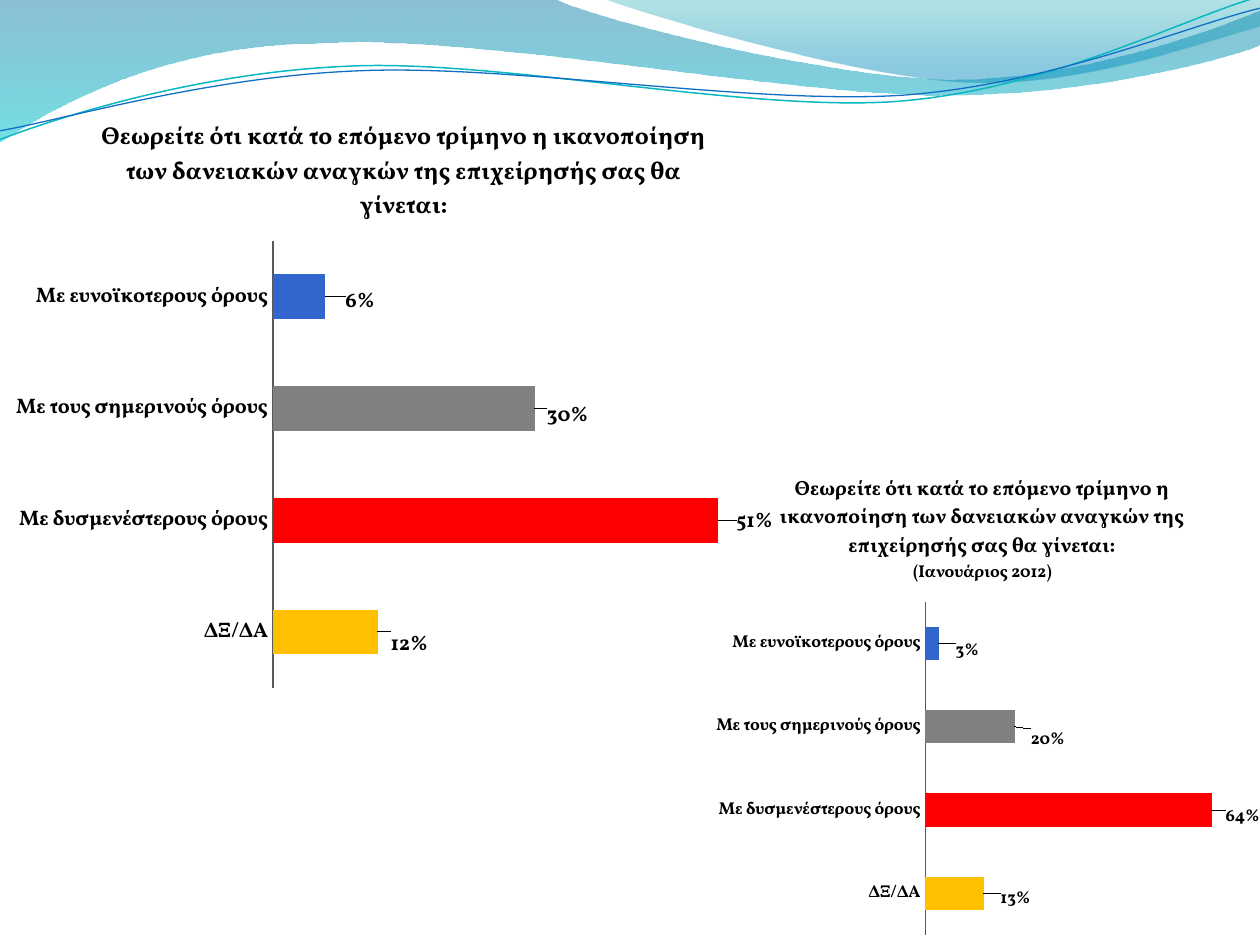
import pptx
import pptx.chart.data
import pptx.dml.color
import pptx.enum.chart
import pptx.oxml
import pptx.oxml.ns
import pptx.util

RGB = pptx.dml.color.RGBColor
BLACK = RGB(0, 0, 0)
AXIS = RGB(0x59, 0x59, 0x59)
BLUE = RGB(0x33, 0x66, 0xCC)
GREY = RGB(0x80, 0x80, 0x80)
RED = RGB(0xFF, 0, 0)
AMBER = RGB(0xFF, 0xC0, 0)
DEEP = RGB(0, 0x74, 0xA1)
AQUA = RGB(0, 0xC6, 0xCF)
TEAL = RGB(0, 0xA1, 0xA9)
SKY = RGB(0, 0x8B, 0xBF)
LINE_TEAL = RGB(0x0A, 0xB8, 0xBF)
LINE_BLUE = RGB(0x0F, 0x6F, 0xC6)

FONT = "Vollkorn"
QUESTION = ("Θεωρείτε ότι κατά το επόμενο τρίμηνο η ικανοποίηση των δανειακών "
            "αναγκών της επιχείρησής σας θα γίνεται:")
ANSWERS = ["Με ευνοϊκοτερους όρους", "Με τους σημερινούς όρους",
           "Με δυσμενέστερους όρους", "ΔΞ/ΔΑ"]
ANSWER_COLORS = [BLUE, GREY, RED, AMBER]
A_NS = pptx.oxml.ns.nsdecls("a")
C_NS = pptx.oxml.ns.nsdecls("c")
qn = pptx.oxml.ns.qn


def px(n):
    """Turn px at 126 to the inch into EMU."""
    return round(n * 914400 / 126)


def format_font(font, size, bold=True, color=BLACK):
    """Set the face, size, weight and colour of a font."""
    font.name = FONT
    font.size = pptx.util.Pt(size)
    font.bold = bold
    font.color.rgb = color


def add_text(p, text, **fmt):
    """Add a formatted run to a paragraph."""
    r = p.add_run()
    r.text = text
    format_font(r.font, **fmt)


def add_outline(s, start, steps, close):
    """Draw a freeform of line steps (x, y) and cubic steps (six numbers)."""
    ends = [(px(step[-2]), px(step[-1])) for step in steps]
    fb = s.shapes.build_freeform(px(start[0]), px(start[1]))
    fb.add_line_segments(ends, close=close)
    sp = fb.convert_to_shape()
    sp.shadow.inherit = False
    lines = sp._element.findall(".//" + qn("a:lnTo"))
    for line, step in zip(lines, steps):
        if len(step) == 6:
            pts = "".join(f'<a:pt x="{px(x) - sp.left}" y="{px(y) - sp.top}"/>'
                          for x, y in zip(step[::2], step[1::2]))
            line.getparent().replace(line, pptx.oxml.parse_xml(
                f"<a:cubicBezTo {A_NS}>{pts}</a:cubicBezTo>"))
    return sp


def add_band(s, start, steps, stops):
    """Draw a wave filled from top to bottom with translucent stops."""
    sp = add_outline(s, start, steps, True)
    sp.line.fill.background()
    sp.fill.gradient()
    sp.fill.gradient_angle = 270
    for stop, (position, color, _) in zip(sp.fill.gradient_stops, stops):
        stop.position = position
        stop.color.rgb = color
    colors = sp._element.spPr.findall(".//" + qn("a:srgbClr"))
    for clr, (_, _, alpha) in zip(colors, stops):
        clr.append(pptx.oxml.parse_xml(
            f'<a:alpha {A_NS} val="{alpha * 1000}"/>'))


def add_wave_line(s, start, steps, color, width):
    """Draw an open, slightly tilted wave line."""
    sp = add_outline(s, start, steps, False)
    sp.rotation = 357.3
    sp.fill.background()
    sp.line.color.rgb = color
    sp.line.width = pptx.util.Pt(width)


def add_waves(s):
    """Draw the decoration along the top edge."""
    add_band(s, (0, -1), [
        (554, -1), (600, 21, 837, 79, 955, 79), (1075, 79, 1207, 33, 1260, 11),
        (1261, 45), (1239, 55, 1096, 96, 940, 95), (784, 95, 481, 35, 324, 43),
        (163, 44, 58, 105, -1, 142)], [(0, DEEP, 45), (1, AQUA, 55)])
    add_band(s, (604, -1), [
        (641, 14, 859, 78, 969, 82), (1079, 87, 1211, 40, 1260, 26),
        (1260, 0)], [(0, TEAL, 30), (0.8, SKY, 45)])
    add_wave_line(s, (-3, 110), [
        (58, 90, 199, 52, 350, 53), (499, 53, 745, 118, 896, 114),
        (1049, 109, 1184, 45, 1260, 27)], LINE_TEAL, 0.85)
    add_wave_line(s, (-2, 101), [
        (57, 94, 207, 57, 357, 58), (509, 58, 750, 111, 902, 108),
        (1052, 104, 1188, 52, 1262, 38)], LINE_BLUE, 0.75)


def set_layout(parent, index, inner=False, edge=True, **fractions):
    """Place a chart part by fractions of the chart, at a child index."""
    for old in parent.findall(qn("c:layout")):
        parent.remove(old)
    parts = '<c:layoutTarget val="inner"/>' if inner else ""
    if edge:
        parts += '<c:xMode val="edge"/><c:yMode val="edge"/>'
    parts += "".join(f'<c:{k} val="{v:.4f}"/>' for k, v in fractions.items())
    parent.insert(index, pptx.oxml.parse_xml(
        f'<c:layout {C_NS}><c:manualLayout>{parts}</c:manualLayout></c:layout>'))


def hide_leader_lines(labels):
    """Turn off the lines between bars and moved labels."""
    labels._element.append(pptx.oxml.parse_xml(
        f'<c:extLst {C_NS}><c:ext uri="{{CE6537A1-D6FC-4f65-9D91-7224C49458BB}}" '
        'xmlns:c15="http://schemas.microsoft.com/office/drawing/2012/chart">'
        '<c15:showLeaderLines val="0"/></c:ext></c:extLst>'))


def add_answers_chart(s, box, plot, title_at, values, axis_max, title, size,
                      axis_width, offsets):
    """Add a bar chart of the answers; plot and title are relative to box."""
    left, top, width, height = box
    data = pptx.chart.data.CategoryChartData(number_format="0%")
    data.categories = ANSWERS
    data.add_series("Series 1", values)
    chart = s.shapes.add_chart(pptx.enum.chart.XL_CHART_TYPE.BAR_CLUSTERED,
                               px(left), px(top), px(width), px(height),
                               data).chart
    format_font(chart.font, 10, bold=False)
    chart.has_legend = False

    tf = chart.chart_title.text_frame
    for i, (text, text_size) in enumerate(title):
        p = tf.add_paragraph() if i else tf.paragraphs[0]
        add_text(p, text, size=text_size)
    chart.chart_title.include_in_layout = False
    set_layout(chart.chart_title._element, 1,
               x=title_at[0] / width, y=title_at[1] / height)

    x, y, w, h = plot
    set_layout(chart._chartSpace.chart.plotArea, 0, inner=True, x=x / width,
               y=y / height, w=w / width, h=h / height)

    cat = chart.category_axis
    cat.reverse_order = True
    cat.major_tick_mark = pptx.enum.chart.XL_TICK_MARK.NONE
    cat.format.line.color.rgb = AXIS
    cat.format.line.width = pptx.util.Pt(axis_width)
    format_font(cat.tick_labels.font, size)
    val = chart.value_axis
    val.minimum_scale, val.maximum_scale = 0, axis_max
    val.has_major_gridlines = False
    val.visible = False

    bars = chart.plots[0]
    bars.gap_width = 150
    bars.vary_by_categories = False
    series = bars.series[0]
    labels = series.data_labels
    labels.show_value = True
    labels.number_format, labels.number_format_is_linked = "0%", False
    format_font(labels.font, size)
    for i, (color, (dx, dy)) in enumerate(zip(ANSWER_COLORS, offsets)):
        point = series.points[i]
        point.format.fill.solid()
        point.format.fill.fore_color.rgb = color
        label = point.data_label
        format_font(label.font, size)
        label.position = pptx.enum.chart.XL_LABEL_POSITION.OUTSIDE_END
        set_layout(labels._element.dLbl_lst[i], 1, edge=False,
                   x=dx / width, y=dy / height)
    hide_leader_lines(labels)


def main():
    """Build the slide and save it."""
    prs = pptx.Presentation()
    prs.slide_width, prs.slide_height = px(1260), px(945)
    s = prs.slides.add_slide(prs.slide_layouts[6])
    add_waves(s)
    add_answers_chart(s, (709, 452, 551, 493), (217, 150, 314, 333), (67, 17),
                      (0.03, 0.2, 0.64, 0.13), 0.7,
                      [(QUESTION, 11.75), ("(Ιανουάριος 2012)", 9.8)], 9.8, 0.75,
                      [(12, 8), (11, 14), (9, 7), (12, 6)])
    add_answers_chart(s, (0, 96, 809, 605), (273, 145, 524, 447), (97, 18),
                      (0.06, 0.3, 0.51, 0.12), 0.6, [(QUESTION, 14)], 12, 1,
                      [(15, 5), (7, 8), (13, 2), (8, 13)])
    prs.save("out.pptx")


if __name__ == "__main__":
    main()
